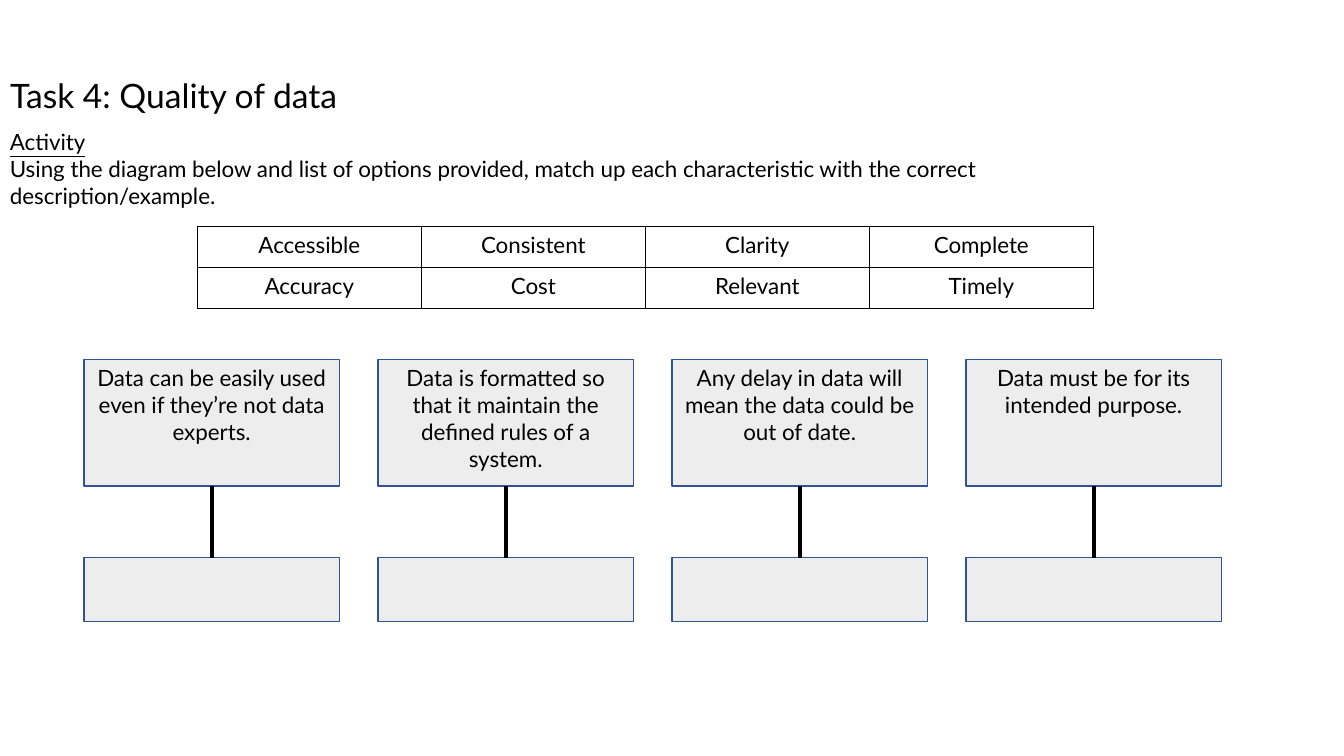
import pptx
import pptx.dml.color
import pptx.enum.shapes
import pptx.enum.text
import pptx.oxml
import pptx.oxml.ns
import pptx.util

Pt = pptx.util.Pt
ALIGN = pptx.enum.text.PP_ALIGN
TOP = pptx.enum.text.MSO_ANCHOR.TOP
BLACK = pptx.dml.color.RGBColor(0x00, 0x00, 0x00)
GREY = pptx.dml.color.RGBColor(0xED, 0xED, 0xED)
BLUE = pptx.dml.color.RGBColor(0x31, 0x53, 0x8F)


def write(paragraph, text, size=16, align=ALIGN.LEFT, underline=False):
    paragraph.alignment = align
    run = paragraph.add_run()
    run.text = text
    run.font.name = "Lato"
    run.font.size = Pt(size)
    run.font.color.rgb = BLACK
    run.font.underline = underline


def add_box(left, top, width, height):
    box = slide.shapes.add_shape(
        pptx.enum.shapes.MSO_SHAPE.RECTANGLE, Pt(left), Pt(top), Pt(width), Pt(height))
    box.shadow.inherit = False
    box.fill.solid()
    box.fill.fore_color.rgb = GREY
    box.line.color.rgb = BLUE
    box.line.width = Pt(1)
    box.text_frame.vertical_anchor = TOP
    return box


presentation = pptx.Presentation()
presentation.slide_width = Pt(960)
presentation.slide_height = Pt(540)
slide = presentation.slides.add_slide(presentation.slide_layouts[5])

# Title
title = slide.shapes.title
title.left, title.top, title.width, title.height = Pt(0), Pt(50), Pt(929), Pt(36)
title.text_frame.vertical_anchor = TOP
write(title.text_frame.paragraphs[0], "Task 4: Quality of data", size=24)

# Activity instructions
activity = slide.shapes.add_textbox(Pt(0), Pt(88), Pt(762), Pt(65.5)).text_frame
activity.word_wrap = True
write(activity.paragraphs[0], "Activity", underline=True)
write(activity.add_paragraph(),
      "Using the diagram below and list of options provided, match up each "
      "characteristic with the correct description/example.")

# Table of options
options = [
    ["Accessible", "Consistent", "Clarity", "Complete"],
    ["Accuracy", "Cost", "Relevant", "Timely"],
]
options_table = slide.shapes.add_table(2, 4, Pt(141), Pt(161.8), Pt(640), Pt(58.4)).table
options_table.first_row = False
options_table.horz_banding = False
for row, names in enumerate(options):
    for column, name in enumerate(names):
        cell = options_table.cell(row, column)
        write(cell.text_frame.paragraphs[0], name, align=ALIGN.CENTER)
        cell_properties = cell._tc.get_or_add_tcPr()
        for side in ("lnL", "lnR", "lnT", "lnB"):
            cell_properties.append(pptx.oxml.parse_xml(
                f'<a:{side} {pptx.oxml.ns.nsdecls("a")} w="12700"><a:solidFill>'
                f'<a:srgbClr val="{BLACK}"/></a:solidFill></a:{side}>'))
        cell.fill.background()

# Descriptions, each joined to an empty answer box
descriptions = [
    "Data can be easily used even if they’re not data experts.",
    "Data is formatted so that it maintain the defined rules of a system.",
    "Any delay in data will mean the data could be out of date.",
    "Data must be for its intended purpose.",
]
for index, text in enumerate(descriptions):
    left = 60 + 210 * index
    description = add_box(left, 256.8, 182.5, 90.5)
    write(description.text_frame.paragraphs[0], text, align=ALIGN.CENTER)
    answer = add_box(left, 398.4, 182.5, 45.4)

    link = slide.shapes.add_connector(
        pptx.enum.shapes.MSO_CONNECTOR.STRAIGHT, 0, 0, 0, 0)
    link.begin_connect(description, 2)
    link.end_connect(answer, 0)
    link.line.color.rgb = BLACK
    link.line.width = Pt(3)
    link._element.spPr.append(pptx.oxml.parse_xml(
        f'<a:effectLst {pptx.oxml.ns.nsdecls("a")}/>'))

presentation.save("out.pptx")
